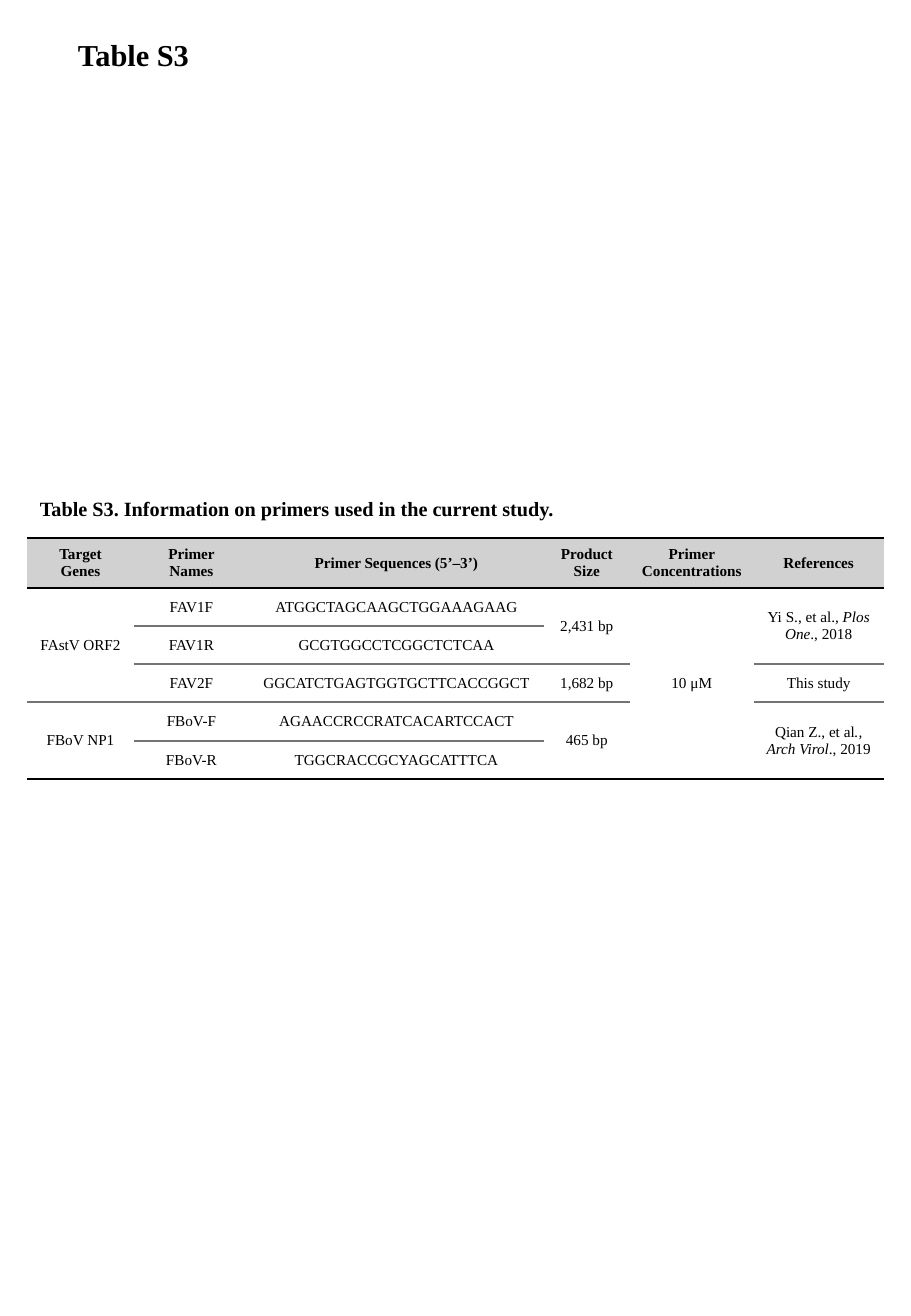
import pptx
import pptx.dml.color
import pptx.enum.text
import pptx.oxml.ns
import pptx.util
from lxml import etree

PX = 914400 / 121.5
BLACK, GREY, HEADER_FILL = "000000", "747474", "D1D1D1"
NO_STYLE = "{2D5ABB26-0587-4C30-8999-92F81FD0307C}"


def px(value):
    return pptx.util.Emu(round(value * PX))


def color(value):
    return pptx.dml.color.RGBColor.from_string(value)


class PrimerSlide:
    font = "Times New Roman"

    def __init__(self, presentation):
        self.slide = presentation.slides.add_slide(presentation.slide_layouts[6])

    def add_run(self, paragraph, text, size, bold=False, italic=False):
        run = paragraph.add_run()
        run.text = text
        run.font.name = self.font
        run.font.size = pptx.util.Pt(size)
        run.font.bold = bold
        run.font.italic = italic
        run.font.color.rgb = color(BLACK)

    def heading(self, left, top, width, height, text, size):
        shape = self.slide.shapes.add_textbox(px(left), px(top), px(width), px(height))
        shape.text_frame.word_wrap = True
        shape.text_frame.auto_size = pptx.enum.text.MSO_AUTO_SIZE.SHAPE_TO_FIT_TEXT
        self.add_run(shape.text_frame.paragraphs[0], text, size, bold=True)

    def border(self, cell, side, line_color=None, width=0):
        properties = cell._tc.get_or_add_tcPr()
        line = etree.SubElement(properties, pptx.oxml.ns.qn(f"a:ln{side}"))
        line.set("w", str(pptx.util.Pt(width)))
        if line_color is None:
            etree.SubElement(line, pptx.oxml.ns.qn("a:noFill"))
        else:
            fill = etree.SubElement(line, pptx.oxml.ns.qn("a:solidFill"))
            etree.SubElement(fill, pptx.oxml.ns.qn("a:srgbClr")).set("val", line_color)

    def rule(self, cell, side, strong):
        self.border(cell, side, *((BLACK, 1) if strong else (GREY, 0.75)))

    def cell(self, table, row, column, runs, span, header):
        cell = table.cell(row, column)
        if span > 1:
            cell.merge(table.cell(row + span - 1, column))
        cell.vertical_anchor = pptx.enum.text.MSO_ANCHOR.MIDDLE
        paragraph = cell.text_frame.paragraphs[0]
        paragraph.alignment = pptx.enum.text.PP_ALIGN.CENTER
        for text, italic in runs:
            self.add_run(paragraph, text, 9, bold=header, italic=italic)
        for side in "LR":
            self.border(cell, side)
        self.rule(cell, "T", row <= 1)
        self.rule(cell, "B", header or row + span == len(table.rows))
        if header:
            cell.fill.solid()
            cell.fill.fore_color.rgb = color(HEADER_FILL)
        else:
            cell.fill.background()

    def table(self, left, top, widths, heights, rows):
        frame = self.slide.shapes.add_table(
            len(heights), len(widths), px(left), px(top), px(sum(widths)), px(sum(heights)))
        table = frame.table
        table.first_row = table.horz_banding = False
        table._tbl.tblPr.find(pptx.oxml.ns.qn("a:tableStyleId")).text = NO_STYLE
        for column, width in zip(table.columns, widths):
            column.width = px(width)
        for row, height in zip(table.rows, heights):
            row.height = px(height)
        for row, entries in enumerate(rows):
            for column, entry in enumerate(entries):
                if entry is not None:
                    content, span = entry if isinstance(entry, tuple) else (entry, 1)
                    runs = [(content, False)] if isinstance(content, str) else content
                    self.cell(table, row, column, runs, span, row == 0)


def main():
    presentation = pptx.Presentation()
    presentation.slide_width = pptx.util.Inches(7.5)
    presentation.slide_height = pptx.util.Inches(10.83)
    page = PrimerSlide(presentation)

    yi_reference = [("Yi S., et al., ", False), ("Plos One", True), ("., 2018", False)]
    qian_reference = [("Qian Z., et al", False), ("., Arch Virol", True), ("., 2019", False)]
    primers = [
        ["Target Genes", "Primer Names", "Primer Sequences (5’–3’)",
         "Product Size", "Primer Concentrations", "References"],
        [("FAstV ORF2", 3), "FAV1F", "ATGGCTAGCAAGCTGGAAAGAAG",
         ("2,431 bp", 2), ("10 μM", 5), (yi_reference, 2)],
        [None, "FAV1R", "GCGTGGCCTCGGCTCTCAA", None, None, None],
        [None, "FAV2F", "GGCATCTGAGTGGTGCTTCACCGGCT", "1,682 bp", None, "This study"],
        [("FBoV NP1", 2), "FBoV-F", "AGAACCRCCRATCACARTCCACT",
         ("465 bp", 2), None, (qian_reference, 2)],
        [None, "FBoV-R", "TGGCRACCGCYAGCATTTCA", None, None, None],
    ]
    page.heading(28, 490, 808, 36, "Table S3. Information on primers used in the current study.", 12)
    page.table(27, 538, [107, 115, 295, 86, 124, 130], [50, 38, 38, 38, 39, 38], primers)
    page.heading(66, 30, 197, 49, "Table S3", 18)
    presentation.save("out.pptx")


if __name__ == "__main__":
    main()
